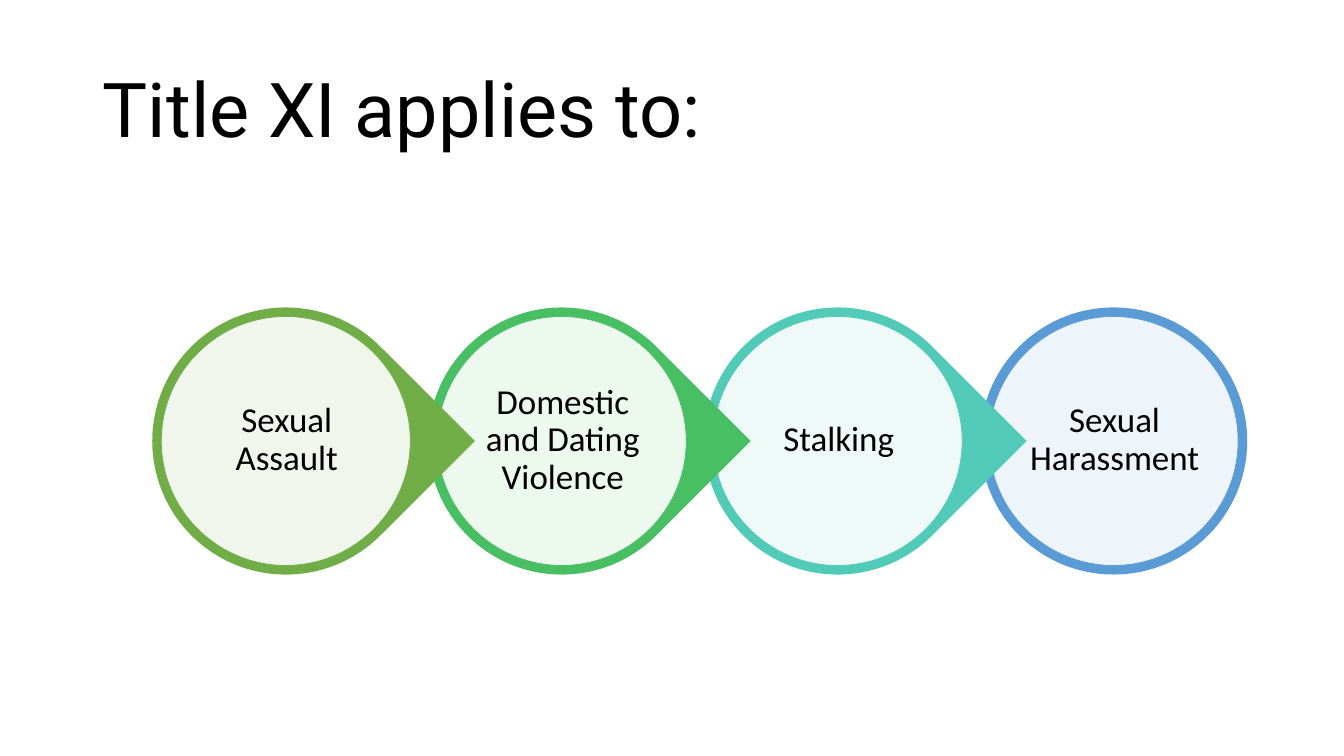
from lxml import etree
from pptx import Presentation, util as u
from pptx.dml.color import RGBColor
from pptx.enum import shapes, text
from pptx.oxml.ns import qn


def colour(value):
    return RGBColor.from_string(value)


class ChainSlide:
    ink = "000000"
    title_font = "Roboto"
    label_font = "Calibri"

    def __init__(self, deck):
        self.page = deck.slides.add_slide(deck.slide_layouts[5])
        self.chain = self.page.shapes.add_group_shape()

    def place(self, left, top, width, height):
        return [u.Inches(length) for length in (left, top, width, height)]

    def set_text(self, box, words, font, size, align):
        frame = box.text_frame
        frame.word_wrap = True
        frame.auto_size = text.MSO_AUTO_SIZE.NONE
        frame.vertical_anchor = text.MSO_ANCHOR.MIDDLE
        para = frame.paragraphs[0]
        para.text = words
        para.alignment = align
        para.line_spacing = 0.9
        para.font.name = font
        para.font.size = u.Pt(size)
        para.font.color.rgb = colour(self.ink)

    def title(self, words, left, top, width, height):
        box = self.page.shapes.title
        box.left, box.top, box.width, box.height = self.place(left, top, width, height)
        self.set_text(box, words, self.title_font, 54, text.PP_ALIGN.LEFT)

    def shape(self, kind, fill, left, top, size):
        shape = self.chain.shapes.add_shape(kind, *self.place(left, top, size, size))
        shape.shadow.inherit = False
        shape.fill.solid()
        shape.fill.fore_color.rgb = colour(fill)
        shape.line.fill.background()
        return shape

    def outer(self, fill, left, top, size, pointed):
        kinds = shapes.MSO_SHAPE
        shape = self.shape(kinds.TEAR if pointed else kinds.OVAL, fill, left, top, size)
        if pointed:
            shape.adjustments[0] = 1
            shape.rotation = 45

    def inner(self, edge, left, top, size):
        disc = self.shape(shapes.MSO_SHAPE.OVAL, "FFFFFF", left, top, size)
        disc.line.color.rgb = colour(edge)
        disc.line.width = u.Pt(0.5)
        white = disc.element.spPr.find(qn("a:solidFill"))[0]
        etree.SubElement(white, qn("a:alpha"), val="90000")

    def label(self, words, left, top, width, height):
        box = self.chain.shapes.add_textbox(*self.place(left, top, width, height))
        frame = box.text_frame
        frame.margin_left = frame.margin_right = u.Inches(0.03)
        frame.margin_top = frame.margin_bottom = u.Inches(0.03)
        self.set_text(box, words, self.label_font, 25, text.PP_ALIGN.CENTER)


def main():
    deck = Presentation()
    deck.slide_width, deck.slide_height = u.Inches(13.33), u.Inches(7.5)
    slide = ChainSlide(deck)
    slide.title("Title XI applies to:", 0.92, 0.4, 11.5, 1.45)

    topics = [
        ("Sexual Assault", "70AD47"),
        ("Domestic and Dating Violence", "49BF64"),
        ("Stalking", "52CAB8"),
        ("Sexual Harassment", "5B9BD5"),
    ]
    first, last, top = 1.51, 9.72, 3.05
    pitch = (last - first) / (len(topics) - 1)
    for index, (words, tint) in reversed(list(enumerate(topics))):
        left = first + index * pitch
        slide.outer(tint, left, top, 2.65, pointed=index < len(topics) - 1)
        slide.inner(tint, left + 0.09, top + 0.09, 2.47)
        slide.label(words, left + 0.45, top + 0.44, 1.77, 1.76)

    deck.save("out.pptx")


if __name__ == "__main__":
    main()
